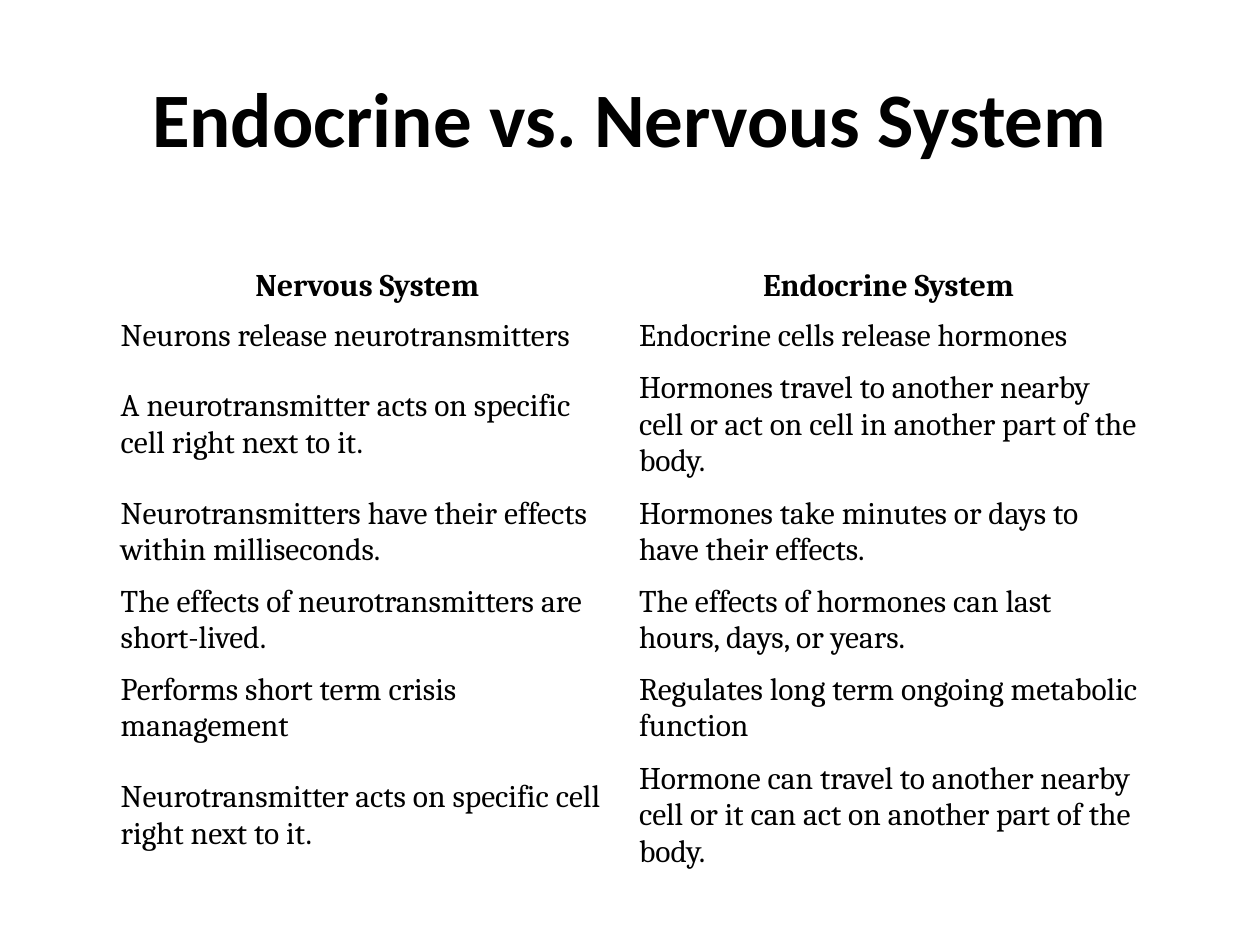
from dataclasses import dataclass

from pptx import Presentation
from pptx import util as u
from pptx.dml import color
from pptx.enum import text


@dataclass(frozen=True)
class Theme:
    ink: color.RGBColor = color.RGBColor(0, 0, 0)
    title_font: str = "Calibri"
    body_font: str = "Cambria"
    title_size: int = 44
    body_size: int = 18


@dataclass(frozen=True)
class Box:
    left: float
    top: float
    width: float
    height: float

    def lengths(self):
        return [u.Cm(n) for n in (self.left, self.top, self.width, self.height)]


THEME = Theme()
NO_STYLE_NO_GRID = "{2D5ABB26-0587-4C30-8999-92F81FD0307C}"
COLUMN_WIDTHS = (10.45, 10.57)
ROW_HEIGHTS = {1: 1, 2: 1.75, 3: 2.5}
COMPARISON = [
    (1, "Nervous System", "Endocrine System"),
    (1, "Neurons release neurotransmitters", "Endocrine cells release hormones"),
    (3, "A neurotransmitter acts on specific cell right next to it.",
     "Hormones travel to another nearby cell or act on cell in another part of the body."),
    (2, "Neurotransmitters have their effects within milliseconds.",
     "Hormones take minutes or days to have their effects."),
    (2, "The effects of neurotransmitters are short-lived.",
     "The effects of hormones can last hours, days, or years."),
    (2, "Performs short term crisis management",
     "Regulates long term ongoing metabolic function"),
    (3, "Neurotransmitter acts on specific cell right next to it.",
     "Hormone can travel to another nearby cell or it can act on another part of the body."),
]


def write(frame, words, font, size, bold, centred):
    para = frame.paragraphs[0]
    para.text = words
    para.alignment = text.PP_ALIGN.CENTER if centred else text.PP_ALIGN.LEFT
    para.font.name = font
    para.font.size = u.Pt(size)
    para.font.bold = bold
    para.font.color.rgb = THEME.ink


def add_title(page, box, words):
    frame = page.shapes.add_textbox(*box.lengths()).text_frame
    frame.word_wrap = True
    frame.vertical_anchor = text.MSO_ANCHOR.MIDDLE
    write(frame, words, THEME.title_font, THEME.title_size, True, True)


def add_comparison(page, box, rows):
    shape = page.shapes.add_table(len(rows), len(COLUMN_WIDTHS), *box.lengths())
    table = shape.table
    table.first_row = table.horz_banding = False
    table._tbl.tblPr.find("{*}tableStyleId").text = NO_STYLE_NO_GRID
    for column, width in zip(table.columns, COLUMN_WIDTHS):
        column.width = u.Cm(width)
    for index, (lines, *entries) in enumerate(rows):
        table.rows[index].height = u.Cm(ROW_HEIGHTS[lines])
        heading = index == 0
        for cell, words in zip(table.rows[index].cells, entries):
            cell.fill.background()
            cell.vertical_anchor = text.MSO_ANCHOR.MIDDLE
            write(cell.text_frame, words, THEME.body_font, THEME.body_size,
                  heading, heading)


def main():
    deck = Presentation()
    deck.slide_width, deck.slide_height = u.Cm(25.4), u.Cm(19.05)
    page = deck.slides.add_slide(deck.slide_layouts[6])
    add_title(page, Box(1.27, 0.76, 22.86, 3.18), "Endocrine vs. Nervous System")
    add_comparison(page, Box(2.18, 5.26, sum(COLUMN_WIDTHS), 12.25), COMPARISON)
    deck.save("out.pptx")


if __name__ == "__main__":
    main()
